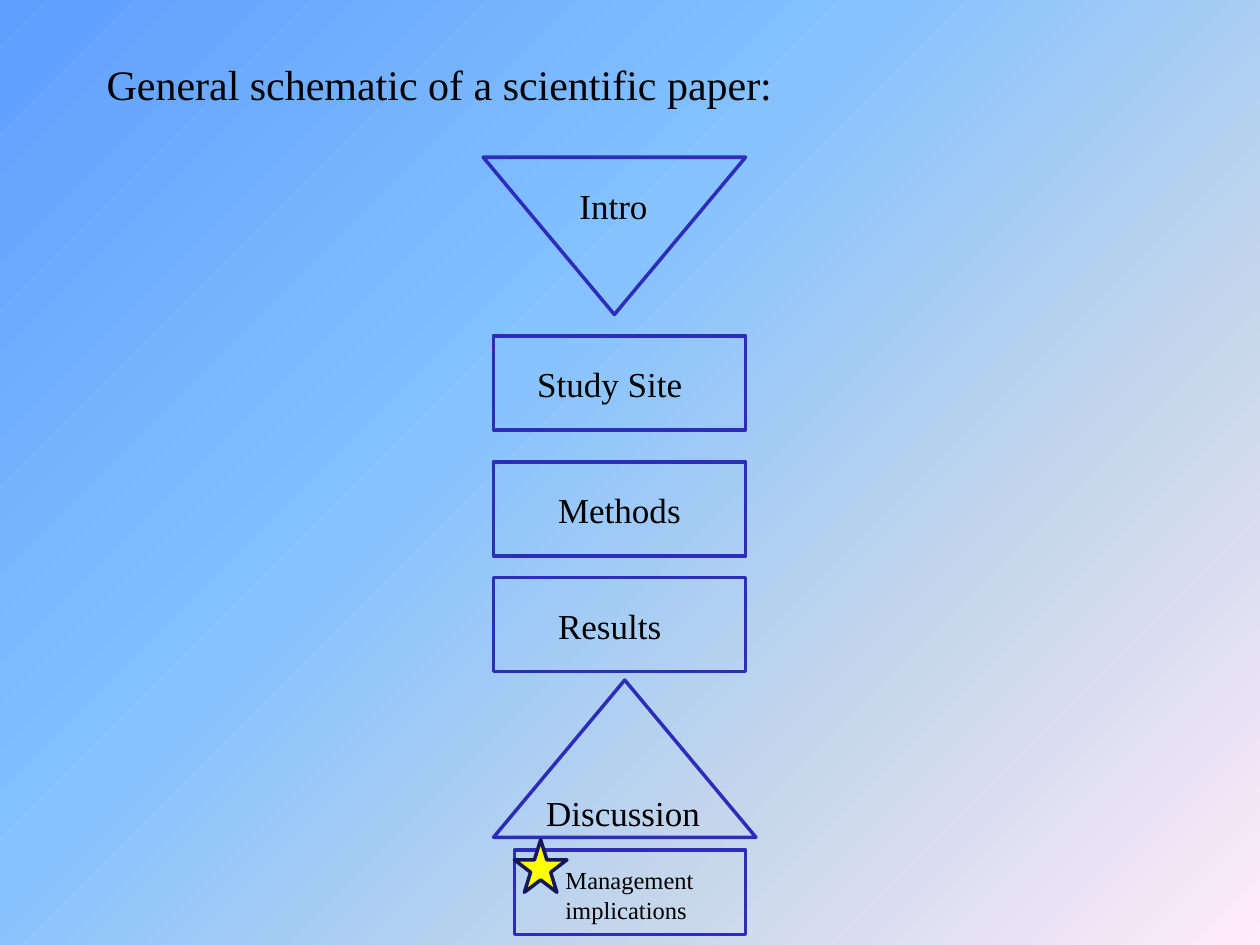
import pptx
import pptx.util
import pptx.dml.color
import pptx.enum.shapes
import pptx.enum.text
import pptx.oxml
import pptx.oxml.ns

Cm = pptx.util.Cm
Kind = pptx.enum.shapes.MSO_SHAPE
BLUE, NAVY, YELLOW, BLACK = "2D2DB9", "17175C", "FFFF00", "000000"

# Content; lengths in cm
STOPS = [(0, "5E9EFF"), (40, "85C2FF"), (70, "C4D6EB"), (100, "FFEBFA")]
TITLE = ("General schematic of a scientific paper:", 1.9, 1.06, 14.05, 1.27)
# Middle sections: label, box top, label left, label width
STEPS = [
    ("Study Site", 6.77, 10.58, 3.45),
    ("Methods", 9.31, 11.0, 3.0),
    ("Results", 11.64, 11.0, 2.62),
]
BOX = (9.95, 5.08, 1.9)  # left, width, height
DROP = 0.42  # from box top to label top
TRI = (5.29, 3.17)  # width, height

deck = pptx.Presentation()
deck.slide_width, deck.slide_height = Cm(25.4), Cm(19.05)
slide = deck.slides.add_slide(deck.slide_layouts[6])


def color(code):
    return pptx.dml.color.RGBColor.from_string(code)


def shape(kind, x, y, w, h, fill=None, line=BLUE, turn=0):
    part = slide.shapes.add_shape(kind, Cm(x), Cm(y), Cm(w), Cm(h))
    part.shadow.inherit = False
    part.rotation = turn
    if fill:
        part.fill.solid()
        part.fill.fore_color.rgb = color(fill)
    else:
        part.fill.background()
    part.line.color.rgb = color(line)
    part.line.width = pptx.util.Pt(2)


def text(words, x, y, w, h=1.11, size=20, font="Times New Roman", ink=BLACK):
    frame = slide.shapes.add_textbox(Cm(x), Cm(y), Cm(w), Cm(h)).text_frame
    frame.word_wrap = False
    frame.auto_size = pptx.enum.text.MSO_AUTO_SIZE.SHAPE_TO_FIT_TEXT
    frame.text = words
    for para in frame.paragraphs:
        para.font.size = pptx.util.Pt(size)
        para.font.name = font
        para.font.color.rgb = color(ink)


# Background gradient
back = slide.background.fill
back.gradient()
back.gradient_angle = 315
stops = next(slide.element.iter(pptx.oxml.ns.qn("a:gsLst")))
for old in list(stops):
    stops.remove(old)
for pos, code in STOPS:
    stops.append(pptx.oxml.parse_xml(
        f'<a:gs {pptx.oxml.ns.nsdecls("a")} pos="{pos * 1000}">'
        f'<a:srgbClr val="{code}"/></a:gs>'))

# Title
text(*TITLE, size=24)

# Intro narrows downwards
shape(Kind.ISOSCELES_TRIANGLE, 9.74, 3.17, *TRI, turn=180)
text("Intro", 11.43, 3.6, 1.9)

# Middle sections
left, width, high = BOX
for label, top, start, span in STEPS:
    shape(Kind.RECTANGLE, left, top, width, high)
    text(label, start, top + DROP, span)

# Discussion widens downwards
shape(Kind.ISOSCELES_TRIANGLE, left, 13.71, *TRI)
text("Discussion", 10.76, 15.83, 3.63)

# Management implications, marked with a star
shape(Kind.RECTANGLE, 10.37, 17.14, 4.66, 1.7)
text("Management\nimplications", 11.15, 17.32, 3.25, 1.45, size=14)
shape(Kind.STAR_5_POINT, 10.37, 16.93, 1.06, 1.06, fill=YELLOW, line=NAVY)

deck.save("out.pptx")
